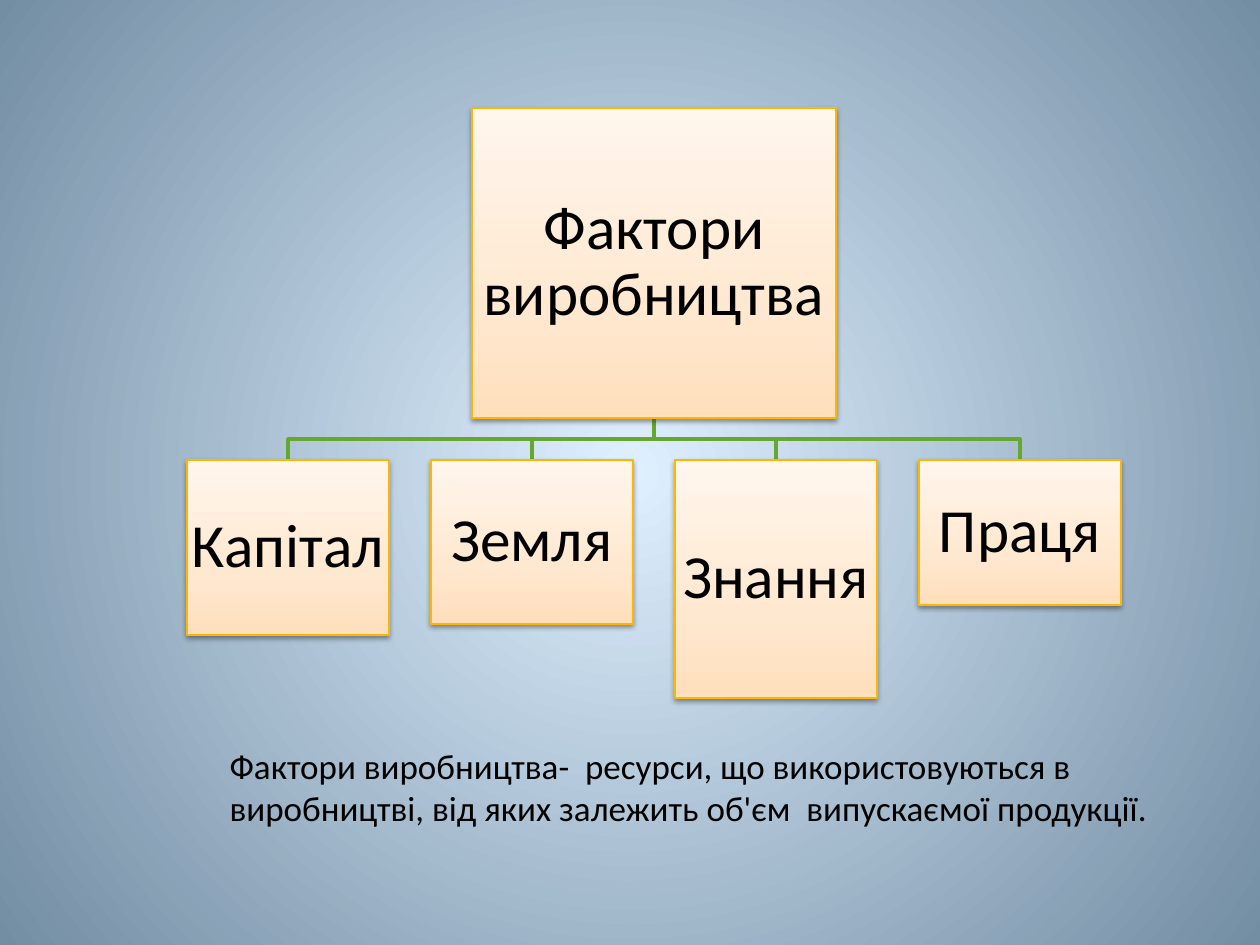
import pptx
import pptx.util
import pptx.oxml
import pptx.oxml.ns
import pptx.dml.color
import pptx.enum.shapes
import pptx.enum.text

PX = pptx.util.Inches(1) // 126
FONT = "Calibri"
COLORS = {
    "glow": "DFF0FF", "edge": "738DA3", "branch": "66A72F", "border": "FEB604",
    "low": "FFDFBC", "middle": "FFE8D0", "high": "FFF6ED", "text": "000000",
}
ROOT = "Фактори виробництва"
FACTORS = [("Капітал", 175), ("Земля", 164), ("Знання", 238), ("Праця", 145)]
DEFINITION = ("Фактори виробництва-  ресурси, що використовуються в виробництві, "
              "від яких залежить об'єм  випускаємої продукції.")


def px(*lengths):
    return [length * PX for length in lengths]


def color(name):
    return pptx.dml.color.RGBColor.from_string(COLORS[name])


def drawing_xml(tag, inner):
    return pptx.oxml.parse_xml(
        f'<a:{tag} {pptx.oxml.ns.nsdecls("a")}>{inner}</a:{tag}>')


def set_gradient(properties, stops, direction):
    """Replace the solid fill of the properties with a gradient."""
    marks = "".join(
        f'<a:gs pos="{percent * 1000}"><a:srgbClr val="{COLORS[name]}"/></a:gs>'
        for percent, name in stops)
    solid = properties.find(pptx.oxml.ns.qn("a:solidFill"))
    properties.replace(
        solid, drawing_xml("gradFill", f"<a:gsLst>{marks}</a:gsLst>{direction}"))


def add_text(para, text, size):
    span = para.add_run()
    span.text = text
    span.font.size = pptx.util.Pt(size)
    span.font.name = FONT
    span.font.color.rgb = color("text")


def paint_background(page):
    page.background.fill.solid()
    properties = page.background._cSld.bg.bgPr
    set_gradient(
        properties, [(0, "glow"), (100, "edge")],
        '<a:path path="circle"><a:fillToRect l="50000" t="50000" r="50000" b="50000"/></a:path>')


def add_branch(shapes, start_x, start_y, end_x, end_y):
    middle_y = (start_y + end_y) // 2
    builder = shapes.build_freeform(start_x, start_y, scale=PX)
    builder.add_line_segments(
        [(start_x, middle_y), (end_x, middle_y), (end_x, end_y)], close=False)
    branch = builder.convert_to_shape()
    branch.shadow.inherit = False
    branch.fill.background()
    branch.line.color.rgb = color("branch")
    branch.line.width = pptx.util.Pt(2)


def add_box(shapes, text, left, top, width, height):
    box = shapes.add_shape(pptx.enum.shapes.MSO_SHAPE.RECTANGLE,
                           *px(left, top, width, height))
    box.fill.solid()
    box.line.color.rgb = color("border")
    box.line.width = pptx.util.Pt(0.75)
    properties = box._element.spPr
    set_gradient(properties, [(0, "low"), (35, "middle"), (100, "high")],
                 '<a:lin ang="16200000" scaled="0"/>')

    # Soft shadow straight below the box
    box.shadow.inherit = False
    properties.find(pptx.oxml.ns.qn("a:effectLst")).append(drawing_xml(
        'outerShdw', '<a:srgbClr val="000000"><a:alpha val="38000"/></a:srgbClr>'
    ))
    shadow = properties.find(pptx.oxml.ns.qn("a:effectLst"))[0]
    shadow.set("blurRad", str(pptx.util.Pt(3.1)))
    shadow.set("dist", str(pptx.util.Pt(1.6)))
    shadow.set("dir", "5400000")
    shadow.set("rotWithShape", "0")

    frame = box.text_frame
    frame.word_wrap = True
    frame.vertical_anchor = pptx.enum.text.MSO_ANCHOR.MIDDLE
    frame.margin_left = frame.margin_right = 3 * PX
    frame.margin_top = frame.margin_bottom = 3 * PX
    para = frame.paragraphs[0]
    para.alignment = pptx.enum.text.PP_ALIGN.CENTER
    para.line_spacing = 0.9
    add_text(para, text, 35)


def add_hierarchy(page, left, top, width):
    shapes = page.shapes.add_group_shape().shapes
    root_width, root_height, level_gap, box_width = 364, 310, 42, 202
    step = (width - box_width) // (len(FACTORS) - 1)
    center = left + width // 2
    root_bottom = top + root_height
    row_top = root_bottom + level_gap
    lefts = [left + step * index for index in range(len(FACTORS))]

    # Branches lie behind the boxes
    for box_left in lefts:
        add_branch(shapes, center, root_bottom, box_left + box_width // 2, row_top)
    add_box(shapes, ROOT, center - root_width // 2, top, root_width, root_height)
    for box_left, (name, height) in zip(lefts, FACTORS):
        add_box(shapes, name, box_left, row_top, box_width, height)


def add_definition(page, left, top, width, height):
    body = page.placeholders[1]
    body.left, body.top, body.width, body.height = px(left, top, width, height)
    para = body.text_frame.paragraphs[0]
    para.space_before = pptx.util.Pt(4)
    add_text(para, DEFINITION, 20)
    properties = para._p.get_or_add_pPr()
    properties.set("marL", "0")
    properties.set("indent", "0")
    properties.append(drawing_xml("buNone", ""))


def main():
    deck = pptx.Presentation()
    deck.slide_width, deck.slide_height = px(1260, 945)
    page = deck.slides.add_slide(deck.slide_layouts[1])
    title = page.shapes.title._element
    title.getparent().remove(title)
    paint_background(page)
    add_hierarchy(page, 187, 108, 934)
    add_definition(page, 217, 738, 974, 168)
    deck.save("out.pptx")


if __name__ == "__main__":
    main()
